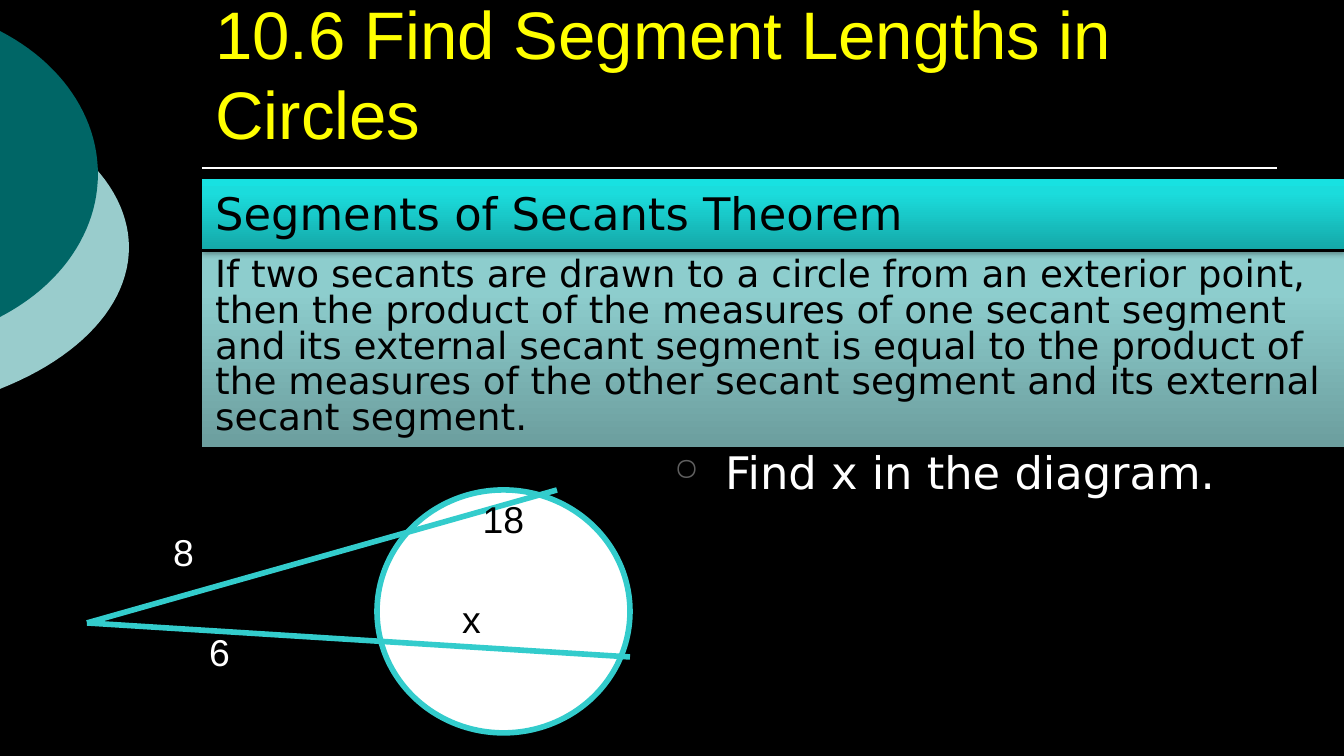
from lxml import etree
from pptx import Presentation
from pptx.dml.color import RGBColor
from pptx.enum.shapes import MSO_CONNECTOR, MSO_SHAPE
from pptx.enum.text import MSO_ANCHOR, PP_ALIGN
from pptx.oxml import parse_xml
from pptx.oxml.ns import nsdecls, qn
from pptx.util import Emu, Pt

EMU_PER_PX = 914400 / 134.4
WIDTH, HEIGHT = 1344, 756
STRAIGHT = MSO_CONNECTOR.STRAIGHT
OVAL, RECTANGLE = MSO_SHAPE.OVAL, MSO_SHAPE.RECTANGLE
TOP, BOTTOM = MSO_ANCHOR.TOP, MSO_ANCHOR.BOTTOM
LEFT, CENTER = PP_ALIGN.LEFT, PP_ALIGN.CENTER

SANS, BODY = "Arial", "DejaVu Sans"
BLACK, WHITE, YELLOW, AQUA = "000000", "FFFFFF", "FFFF00", "33CCCC"
BRIGHT_STOPS = [(0, "15A9A9"), (80, "1BDCDC"), (100, "18E1E1")]
MUTED_STOPS = [(0, "6C9E9E"), (80, "8DCDCD"), (100, "8CCFCF")]


def px(length):
    return Emu(round(length * EMU_PER_PX))


def color(hex_string):
    return RGBColor.from_string(hex_string)


def write_text(shape, text, size=20, font=SANS, fill=WHITE, anchor=TOP,
               align=LEFT, line_spacing=None, space_before=0):
    frame = shape.text_frame
    frame.word_wrap = True
    frame.vertical_anchor = anchor
    paragraph = frame.paragraphs[0]
    paragraph.alignment = align
    paragraph.line_spacing = line_spacing
    paragraph.space_before = Pt(space_before)
    run = paragraph.add_run()
    run.text = text
    run.font.size = Pt(size)
    run.font.name = font
    run.font.color.rgb = color(fill)
    return paragraph


def add_text(slide, box, text, **text_format):
    shape = slide.shapes.add_textbox(*map(px, box))
    return write_text(shape, text, **text_format)


def add_line(slide, start, end, line_color, width):
    line = slide.shapes.add_connector(STRAIGHT, *map(px, start + end))
    line.line.color.rgb = color(line_color)
    line.line.width = Pt(width)
    etree.SubElement(line._element.spPr, qn("a:effectLst"))


def add_bullet(paragraph, character, hex_string, percent, indent):
    properties = paragraph._p.get_or_add_pPr()
    properties.set("marL", str(px(indent)))
    properties.set("indent", str(-px(indent)))
    for tag, value in (("buClr", None), ("buSzPct", percent * 1000), ("buChar", character)):
        element = etree.SubElement(properties, qn(f"a:{tag}"))
        if tag == "buClr":
            etree.SubElement(element, qn("a:srgbClr"), val=hex_string)
        else:
            element.set("char" if tag == "buChar" else "val", str(value))


def add_half_disc(slide, box, shoulder, fill):
    """Bulge from the left edge of the box; shoulder is the first curve handle."""
    left, top, width, height = box
    handle_x, handle_y, handle_rise = shoulder
    middle = height / 2
    upper = []
    for step in range(25):
        t = step / 24
        a, b, c = 3 * t * (1 - t) ** 2, 3 * t * t * (1 - t), t ** 3
        upper.append((a * handle_x + (b + c) * width,
                      a * handle_y + b * handle_rise + c * middle))
    lower = [(x, height - y) for x, y in reversed(upper[:-1])]
    points = [(px(left + x), px(top + y)) for x, y in upper + lower]
    builder = slide.shapes.build_freeform(*points[0])
    builder.add_line_segments(points[1:], close=True)
    shape = builder.convert_to_shape()
    shape.shadow.inherit = False
    shape.fill.solid()
    shape.fill.fore_color.rgb = color(fill)
    shape.line.fill.background()


def add_panel(slide, box, stops, text, **text_format):
    """Rectangle with an upward gradient and a soft shadow below."""
    shape = slide.shapes.add_shape(RECTANGLE, *map(px, box))
    shape.line.fill.background()
    shape.shadow.inherit = False
    properties = shape._element.spPr
    stop_xml = "".join(f'<a:gs pos="{position * 1000}"><a:srgbClr val="{hex_string}"/></a:gs>'
                       for position, hex_string in stops)
    gradient = parse_xml(f'<a:gradFill {nsdecls("a")} rotWithShape="1"><a:gsLst>{stop_xml}'
                         '</a:gsLst><a:lin ang="16200000" scaled="0"/></a:gradFill>')
    properties.find(qn("a:prstGeom")).addnext(gradient)
    properties.find(qn("a:effectLst")).append(parse_xml(
        f'<a:outerShdw {nsdecls("a")} blurRad="{Pt(3.1)}" dist="{Pt(1.8)}" dir="5400000" '
        'rotWithShape="0"><a:srgbClr val="000000"><a:alpha val="35000"/></a:srgbClr>'
        '</a:outerShdw>'))
    write_text(shape, text, font=BODY, fill=BLACK, **text_format)


def add_decoration(slide, left, top):
    add_half_disc(slide, (left, top + 106, 129, 283), (81, 32, 85), "99CCCC")
    add_half_disc(slide, (left, top + 31, 98, 286), (62, 32, 86), "006666")


def add_header(slide, left, top, width, height):
    add_text(slide, (left, top, width, height), "10.6 Find Segment Lengths in Circles",
             size=36, fill=YELLOW, anchor=BOTTOM)
    rule_y = top + height + 8
    add_line(slide, (left, rule_y), (left + width, rule_y), WHITE, 1)


def add_theorem(slide, left, top, width):
    add_panel(slide, (left, top + 73, width, 195), MUTED_STOPS,
              "If two secants are drawn to a circle from an exterior point, then the product "
              "of the measures of one secant segment and its external secant segment is equal "
              "to the product of the measures of the other secant segment and its external "
              "secant segment.", line_spacing=0.8)
    add_panel(slide, (left, top, width, 70), BRIGHT_STOPS,
              "Segments of Secants Theorem", size=24)


def add_question(slide, box):
    paragraph = add_text(slide, box, "Find x in the diagram.", size=24, font=BODY,
                         line_spacing=0.8, space_before=5)
    add_bullet(paragraph, "○", "5F5F5F", 70, 51)


def add_secant_diagram(slide, left, top):
    circle = slide.shapes.add_shape(OVAL, px(left + 290), px(top), px(253), px(243))
    circle.shadow.inherit = False
    circle.fill.solid()
    circle.fill.fore_color.rgb = color(WHITE)
    circle.line.color.rgb = color(AQUA)
    circle.line.width = Pt(3)
    exterior_point = (left, top + 133)
    for x, y in ((470, 0), (543, 167)):
        add_line(slide, exterior_point, (left + x, top + y), AQUA, 3)
    for text, x, y, width, fill, align in (
            ("8", 73, 33, 73, WHITE, LEFT),
            ("6", 109, 133, 73, WHITE, LEFT),
            ("x", 362, 100, 73, BLACK, LEFT),
            ("18", 362, 0, 109, BLACK, CENTER)):
        add_text(slide, (left + x, top + y, width, 67), text, fill=fill, align=align)


def main():
    presentation = Presentation()
    presentation.slide_width, presentation.slide_height = px(WIDTH), px(HEIGHT)
    slide = presentation.slides.add_slide(presentation.slide_layouts[6])
    slide.background.fill.solid()
    slide.background.fill.fore_color.rgb = color(BLACK)
    add_decoration(slide, 0, 0)
    add_header(slide, 202, 34, 1075, 126)
    add_question(slide, (661, 448, 616, 159))
    add_secant_diagram(slide, 87, 490)
    add_theorem(slide, 202, 179, 1142)
    presentation.save("out.pptx")


if __name__ == "__main__":
    main()
